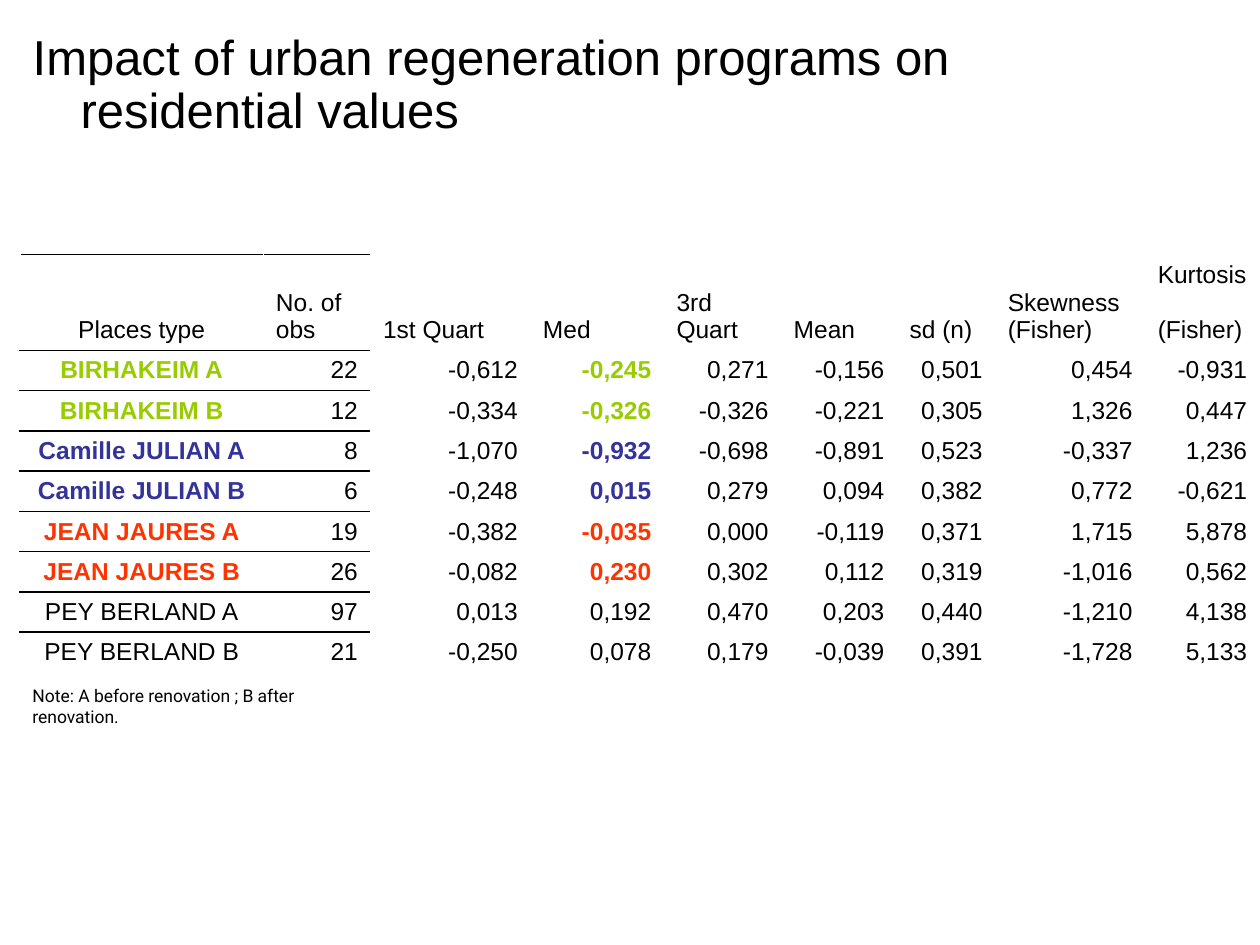
import pptx
import pptx.util
import pptx.dml.color
import pptx.enum.text
import pptx.oxml
import pptx.oxml.ns

Inches, Pt = pptx.util.Inches, pptx.util.Pt
RGBColor = pptx.dml.color.RGBColor
Align, Anchor = pptx.enum.text.PP_ALIGN, pptx.enum.text.MSO_ANCHOR

BLACK = RGBColor(0x00, 0x00, 0x00)
GREEN = RGBColor(0x99, 0xCC, 0x00)
BLUE = RGBColor(0x33, 0x33, 0x99)
RED = RGBColor(0xFF, 0x33, 0x00)

# Content
TITLE = "Impact of urban regeneration programs on residential values"
NOTE = "Note: A before renovation ; B after renovation."
HEADERS = ["Places type", "No. of obs", "1st Quart", "Med", "3rd Quart", "Mean",
           "sd (n)", "Skewness\n(Fisher)", "Kurtosis\n (Fisher)"]
PLACES = [
    ("BIRHAKEIM A", "22", "-0,612", "-0,245", "0,271", "-0,156", "0,501", "0,454", "-0,931"),
    ("BIRHAKEIM B", "12", "-0,334", "-0,326", "-0,326", "-0,221", "0,305", "1,326", "0,447"),
    ("Camille JULIAN A", "8", "-1,070", "-0,932", "-0,698", "-0,891", "0,523", "-0,337", "1,236"),
    ("Camille JULIAN B", "6", "-0,248", "0,015", "0,279", "0,094", "0,382", "0,772", "-0,621"),
    ("JEAN JAURES A", "19", "-0,382", "-0,035", "0,000", "-0,119", "0,371", "1,715", "5,878"),
    ("JEAN JAURES B", "26", "-0,082", "0,230", "0,302", "0,112", "0,319", "-1,016", "0,562"),
    ("PEY BERLAND A", "97", "0,013", "0,192", "0,470", "0,203", "0,440", "-1,210", "4,138"),
    ("PEY BERLAND B", "21", "-0,250", "0,078", "0,179", "-0,039", "0,391", "-1,728", "5,133"),
]
PLACE_COLORS = [GREEN, GREEN, BLUE, BLUE, RED, RED, BLACK, BLACK]

# Layout
LEFT = 0.16
COLUMN_WIDTHS = [1.93, 0.85, 1.27, 1.06, 0.93, 0.92, 0.78, 1.19, 0.91]
HEADER_HEIGHT, ROW_HEIGHT = 0.76, 0.32
NAME, MEDIAN = 0, 3        # columns that carry the place colour
RULED_COLUMNS = 2          # columns with horizontal rules


def format_text(frame, size, font, color=BLACK, bold=False, align=Align.LEFT):
    for para in frame.paragraphs:
        para.alignment = align
        for span in para.runs:
            span.font.size = Pt(size)
            span.font.name = font
            span.font.bold = bold
            span.font.color.rgb = color


def add_rules(cell, sides):
    properties = cell._tc.get_or_add_tcPr()
    for position, side in enumerate(sides):
        line = pptx.oxml.parse_xml(
            f'<a:ln{side} {pptx.oxml.ns.nsdecls("a")} w="12700">'
            f'<a:solidFill><a:srgbClr val="{BLACK}"/></a:solidFill></a:ln{side}>')
        properties.insert(position, line)


deck = pptx.Presentation()
deck.slide_width, deck.slide_height = Inches(10), Inches(7.5)
page = deck.slides.add_slide(deck.slide_layouts[5])

# Title with a hanging indent
title = page.shapes.title
title.left, title.top = Inches(LEFT), Inches(0.21)
title.width, title.height = Inches(9.02), Inches(0.95)
title.text_frame.text = TITLE
title.text_frame.word_wrap = True
title.text_frame.auto_size = pptx.enum.text.MSO_AUTO_SIZE.NONE
title.text_frame.vertical_anchor = Anchor.TOP
format_text(title.text_frame, 28, "Arial")
para = title.text_frame.paragraphs[0]
para.line_spacing = 0.9
para.space_before = Pt(5.6)
indent = para._p.get_or_add_pPr()
indent.set("marL", str(Inches(0.38)))
indent.set("indent", str(-Inches(0.38)))

# Table of price statistics
rows = [HEADERS, *PLACES]
heights = [HEADER_HEIGHT] + [ROW_HEIGHT] * len(PLACES)
table = page.shapes.add_table(
    len(rows), len(HEADERS), Inches(LEFT), Inches(2.02),
    Inches(sum(COLUMN_WIDTHS)), Inches(sum(heights))).table
table.first_row = table.horz_banding = False
for column, width in zip(table.columns, COLUMN_WIDTHS):
    column.width = Inches(width)
for row, height in zip(table.rows, heights):
    row.height = Inches(height)

for r, values in enumerate(rows):
    for c, value in enumerate(values):
        cell = table.cell(r, c)
        cell.text_frame.text = value
        cell.vertical_anchor = Anchor.BOTTOM
        cell.fill.background()
        color = PLACE_COLORS[r - 1] if r > 0 and c in (NAME, MEDIAN) else BLACK
        if c == NAME:
            align = Align.CENTER
        else:
            align = Align.RIGHT if r > 0 else Align.LEFT
        format_text(cell.text_frame, 14, "Arial", color, color != BLACK, align)
        if c < RULED_COLUMNS:
            add_rules(cell, "TB" if r < len(PLACES) else "T")

# Note under the table
note = page.shapes.add_textbox(Inches(LEFT), Inches(5.44), Inches(2.9), Inches(0.57))
note.text_frame.word_wrap = True
note.text_frame.margin_top = 0
note.text_frame.text = NOTE
format_text(note.text_frame, 10, "Roboto")

deck.save("out.pptx")
